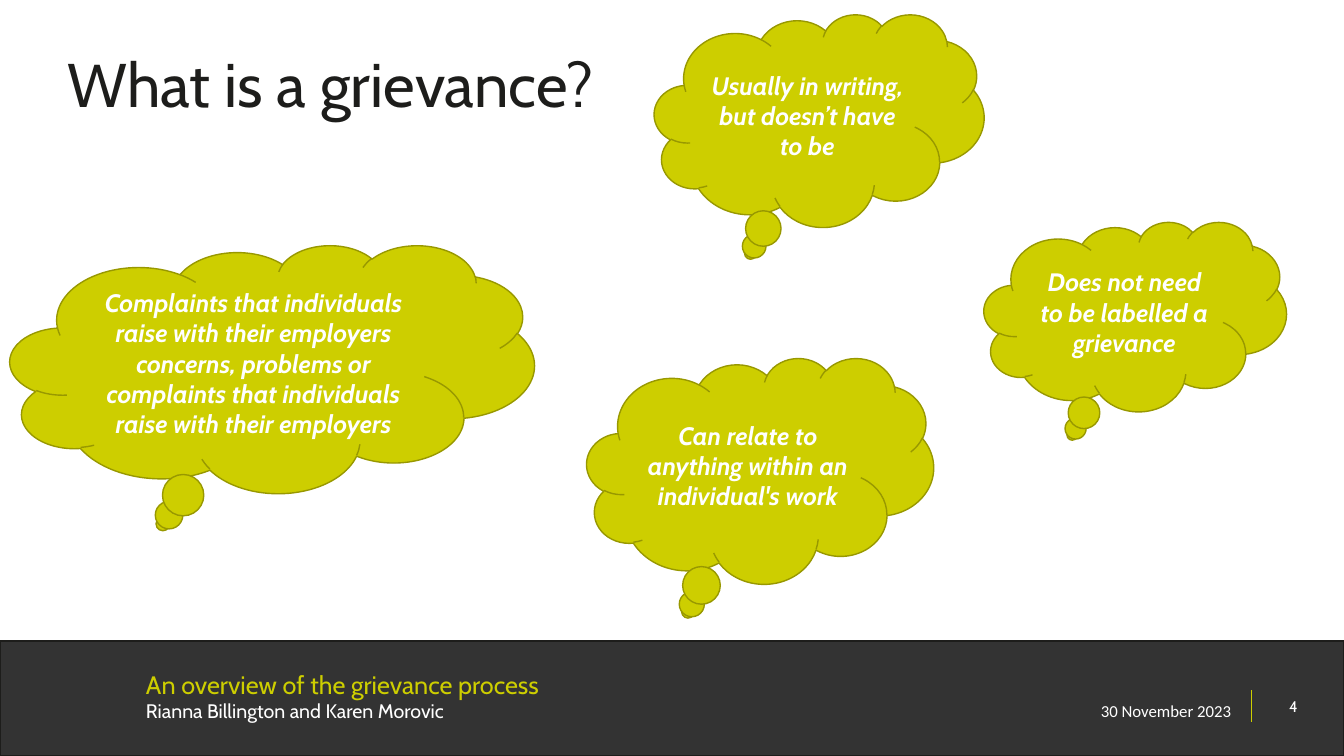
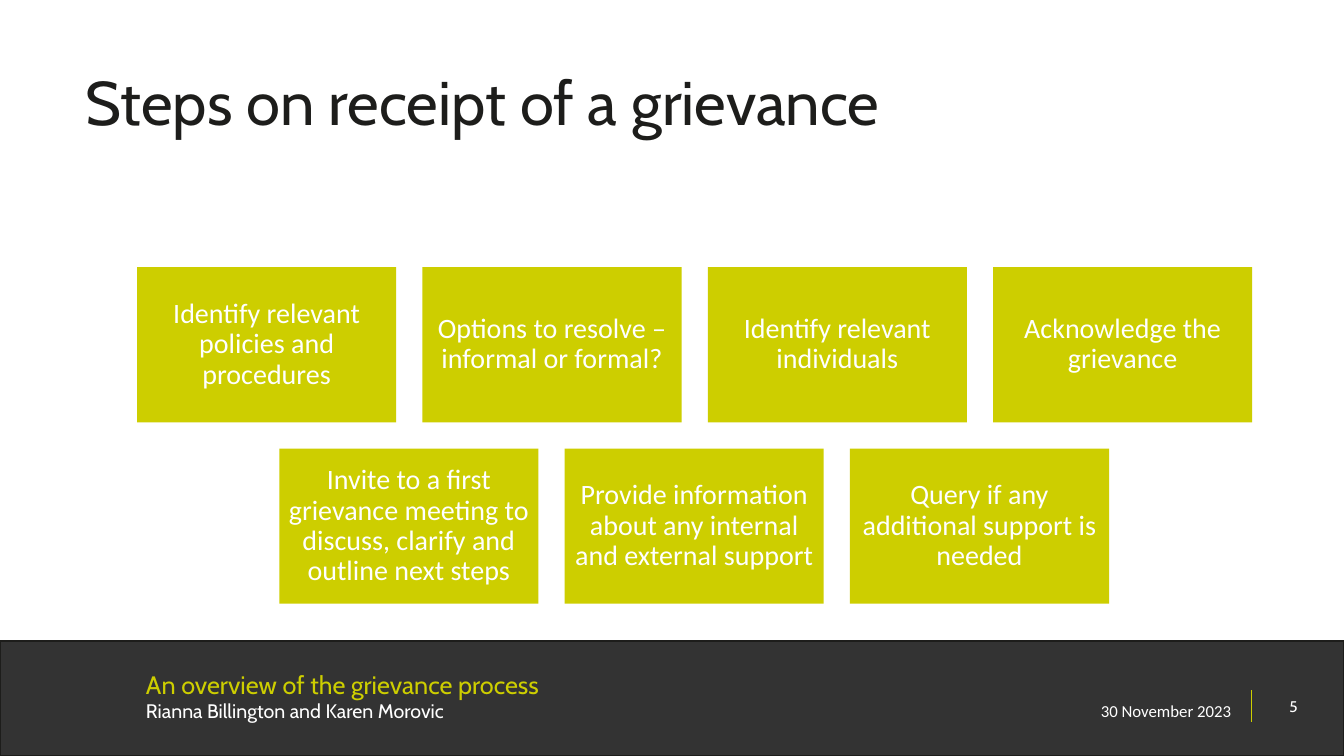
from dataclasses import dataclass

import lxml.etree
import pptx
import pptx.dml.color
import pptx.enum.shapes
import pptx.enum.text
import pptx.oxml
import pptx.oxml.ns
import pptx.util

PX = 9144  # EMU per px: 100 px to the inch
SHAPE = pptx.enum.shapes.MSO_SHAPE
ALIGN = pptx.enum.text.PP_ALIGN
ANCHOR = pptx.enum.text.MSO_ANCHOR
qn = pptx.oxml.ns.qn


@dataclass(frozen=True)
class Theme:
    lime: str = "CDCE00"
    lime_dark: str = "989800"
    ink: str = "1D1D1B"
    black: str = "000000"
    white: str = "FFFFFF"
    heading: str = "Cabin"
    body: str = "Calibri"
    title_size: int = 44
    step_size: int = 20
    cloud_size: int = 18
    talk_size: int = 18
    speakers_size: int = 14
    date_size: int = 12
    number_size: int = 11


THEME = Theme()
SLIDE_BOX = (0, 0, 1333, 750)
BAND_BOX = (0, 636, 1333, 114)
FIRST_NUMBER = 4

CLOUDS = [
    ((649, 14, 327, 211), ["Usually in writing, but doesn’t have to be"]),
    ((10, 243, 520, 246), [
        "Complaints that individuals raise with their employers",
        "concerns, problems or complaints that individuals raise with their employers",
    ]),
    ((582, 355, 344, 224), ["Can relate to anything within an individual's work"]),
    ((976, 220, 300, 188), ["Does not need to be labelled a grievance"]),
]

STEPS = [
    "Identify relevant policies and procedures",
    "Options to resolve – informal or formal?",
    "Identify relevant individuals",
    "Acknowledge the grievance",
    "Invite to a first grievance meeting to discuss, clarify and outline next steps",
    "Provide information about any internal and external support",
    "Query if any additional support is needed",
]


def emu(box):
    return [pptx.util.Emu(length * PX) for length in box]


def rgb(value):
    return pptx.dml.color.RGBColor.from_string(value)


def style_font(font, size, color, name, emphasis=None):
    font.size = pptx.util.Pt(size)
    font.color.rgb = rgb(color)
    font.name = name
    font.bold = font.italic = emphasis


def add_filled(slide, kind, box, fill, line=None):
    shape = slide.shapes.add_shape(kind, *emu(box))
    shape.shadow.inherit = False
    shape.fill.solid()
    shape.fill.fore_color.rgb = rgb(fill)
    if line:
        shape.line.color.rgb = rgb(line)
        shape.line.width = pptx.util.Pt(1)
    else:
        shape.line.fill.background()
    return shape


def add_text_box(slide, box, anchor):
    frame = slide.shapes.add_textbox(*emu(box)).text_frame
    frame.word_wrap = True
    frame.vertical_anchor = anchor
    return frame


def set_title(slide, box, text):
    title = slide.shapes.title
    title.left, title.top, title.width, title.height = emu(box)
    frame = title.text_frame
    frame.text = text
    frame.auto_size = pptx.enum.text.MSO_AUTO_SIZE.NONE
    frame.vertical_anchor = ANCHOR.BOTTOM
    paragraph = frame.paragraphs[0]
    paragraph.alignment = ALIGN.LEFT
    paragraph.line_spacing = 0.9
    style_font(paragraph.font, THEME.title_size, THEME.ink, THEME.heading)


def add_slide_number(slide, box, number):
    paragraph = add_text_box(slide, box, ANCHOR.MIDDLE).paragraphs[0]
    paragraph.alignment = ALIGN.RIGHT
    paragraph.line_spacing = 0.9
    run = paragraph.add_run()
    run.text = str(number)
    style_font(run.font, THEME.number_size, THEME.white, THEME.heading)
    # Turn the run into a live slide number field
    field = lxml.etree.SubElement(paragraph._p, qn("a:fld"), {
        "id": "{B6F15528-21DE-4FAA-801E-634DDDAF4B2B}", "type": "slidenum"})
    field.extend(list(run._r))
    paragraph._p.remove(run._r)


def add_footer(slide, box, number):
    left, top, width, height = box
    right = left + width

    # Translucent band
    band = add_filled(slide, SHAPE.RECTANGLE, box, THEME.black, THEME.ink)
    color = band._element.spPr.find(qn("a:solidFill"))[0]
    lxml.etree.SubElement(color, qn("a:alpha"), val="80000")

    # Divider between date and slide number
    divider = slide.shapes.add_connector(
        pptx.enum.shapes.MSO_CONNECTOR.STRAIGHT,
        *emu((right - 92, top + 49, right - 92, top + 80)))
    divider.line.color.rgb = rgb(THEME.lime)
    divider.line.width = pptx.util.Pt(0.5)
    lxml.etree.SubElement(divider._element.spPr, qn("a:effectLst"))

    # Talk title and speakers
    talk_frame = add_text_box(slide, (left + 135, top + 22, 450, 65), ANCHOR.MIDDLE)
    paragraph = talk_frame.paragraphs[0]
    talk = paragraph.add_run()
    talk.text = "An overview of the grievance process"
    style_font(talk.font, THEME.talk_size, THEME.lime, THEME.heading)
    paragraph.add_line_break()
    speakers = paragraph.add_run()
    speakers.text = "Rianna Billington and Karen Morovic"
    style_font(speakers.font, THEME.speakers_size, THEME.white, THEME.heading)

    # Date and slide number
    date_frame = add_text_box(slide, (right - 251, top + 54, 167, 30), ANCHOR.TOP)
    date_frame.text = "30 November 2023"
    style_font(date_frame.paragraphs[0].font, THEME.date_size, THEME.white, THEME.body)
    add_slide_number(slide, (right - 91, top + 54, 55, 23), number)


def add_cloud(slide, box, lines):
    cloud = add_filled(slide, SHAPE.CLOUD_CALLOUT, box, THEME.lime, THEME.lime_dark)
    frame = cloud.text_frame
    frame.word_wrap = True
    frame.vertical_anchor = ANCHOR.MIDDLE
    frame.text = "\n".join(lines)
    for paragraph in frame.paragraphs:
        paragraph.alignment = ALIGN.CENTER
        style_font(paragraph.font, THEME.cloud_size, THEME.white, THEME.heading, True)


def add_step(slide, box, text):
    frame = add_filled(slide, SHAPE.RECTANGLE, box, THEME.lime).text_frame
    frame.word_wrap = True
    frame.vertical_anchor = ANCHOR.MIDDLE
    margin = pptx.util.Emu(8 * PX)
    frame.margin_left = frame.margin_right = margin
    frame.margin_top = frame.margin_bottom = margin
    frame.text = text
    paragraph = frame.paragraphs[0]
    paragraph.alignment = ALIGN.CENTER
    paragraph.line_spacing = 0.9
    style_font(paragraph.font, THEME.step_size, THEME.white, THEME.body)


def add_step_grid(slide, box, steps, columns=4, gap=26):
    """Fill rows of equal cards, centring a row that is not full."""
    left, top, width, height = box
    rows = -(-len(steps) // columns)
    card_width = (width - gap * (columns - 1)) // columns
    card_height = (height - gap * (rows - 1)) // rows
    for row in range(rows):
        row_steps = steps[row * columns:(row + 1) * columns]
        row_width = len(row_steps) * (card_width + gap) - gap
        row_left = left + (width - row_width) // 2
        for column, text in enumerate(row_steps):
            add_step(slide, (row_left + column * (card_width + gap),
                             top + row * (card_height + gap),
                             card_width, card_height), text)


def new_slide(presentation, title_box, title):
    slide = presentation.slides.add_slide(presentation.slide_layouts[5])
    number = FIRST_NUMBER + len(presentation.slides) - 1
    add_footer(slide, BAND_BOX, number)
    set_title(slide, title_box, title)
    return slide


def build_definition_slide(presentation):
    slide = new_slide(presentation, (57, 31, 1167, 94), "What is a grievance?")
    for box, lines in CLOUDS:
        add_cloud(slide, box, lines)


def build_steps_slide(presentation):
    slide = new_slide(presentation, (75, 3, 1167, 140),
                      "Steps on receipt of a grievance")
    add_step_grid(slide, (136, 265, 1106, 334), STEPS)


def main():
    presentation = pptx.Presentation()
    presentation.slide_width, presentation.slide_height = emu(SLIDE_BOX[2:])
    presentation.element.set("firstSlideNum", str(FIRST_NUMBER))
    build_definition_slide(presentation)
    build_steps_slide(presentation)
    presentation.save("out.pptx")


if __name__ == "__main__":
    main()
